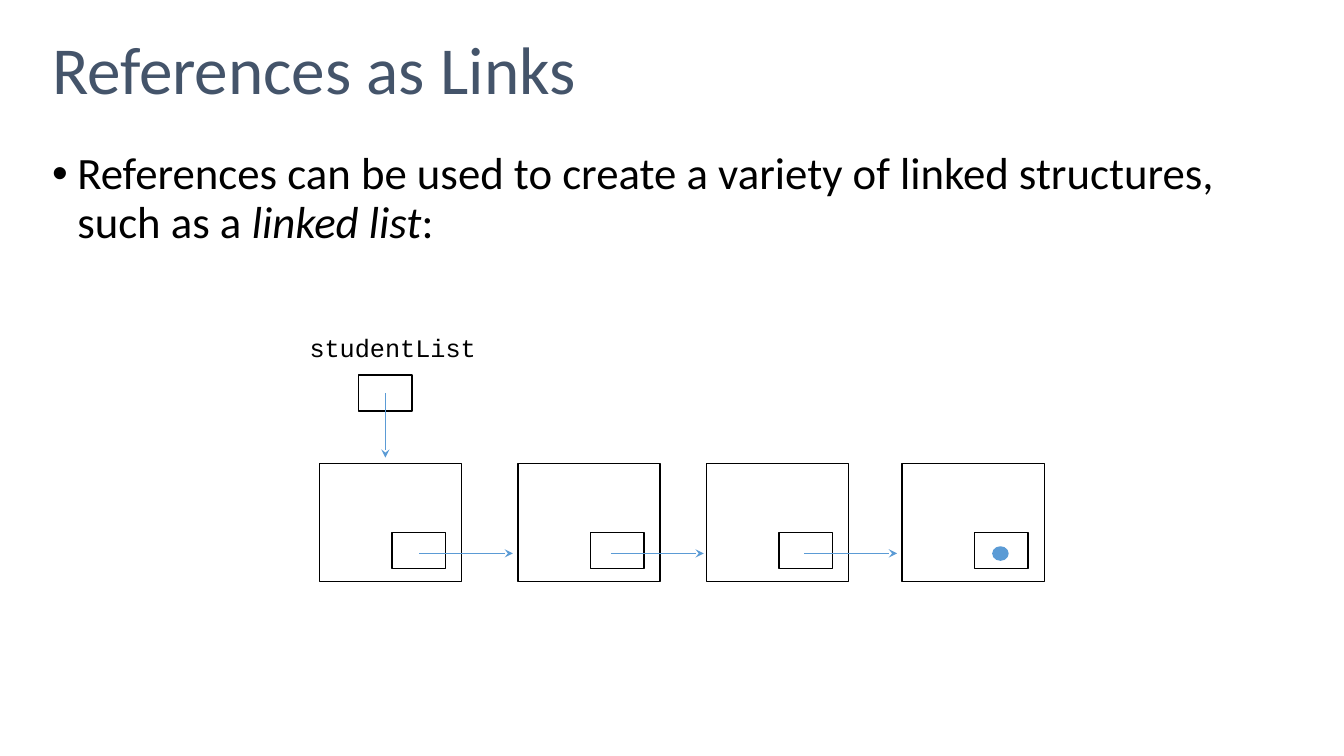
from pptx import Presentation
from pptx.util import Pt
from pptx.dml.color import RGBColor
from pptx.enum.shapes import MSO_SHAPE as Shape, MSO_CONNECTOR as Conn
from pptx.enum.text import PP_ALIGN as Align, MSO_ANCHOR as Anchor, MSO_AUTO_SIZE as Auto
from pptx.oxml.ns import qn
from lxml.etree import SubElement as Sub

# Content
TITLE = "References as Links"
BODY = [
    ("References can be used to create a variety of linked structures, such as a ", False),
    ("linked list", True),
    (":", False),
]
LABEL = "studentList"

# Layout in points
TITLE_BOX = (30, 0, 900, 104.4)
BODY_BOX = (30, 104.4, 900, 407.5)
LABEL_BOX = (213.8, 234, 133.2, 28.8)
HEAD = (256.2, 267.8)
NODES = [228.2, 370.1, 504.7, 644.4]
NODE_Y = 331.2
NODE = (101.5, 84.2)
SLOT = (38.2, 25.9)
SLOT_AT = (51.8, 49)
LINK_Y = 395.3
LINKS = [(299.4, 366.4), (436.3, 502.7), (574.5, 640.8)]
DOT = (709.2, 390.7, 10.8, 9.4)

BLACK, SLATE, BLUE = "000000", "44546A", "5B9BD5"


def color(text):
    return RGBColor.from_string(text)


def pts(vals):
    return [Pt(v) for v in vals]


def place(shape, box):
    shape.left, shape.top, shape.width, shape.height = pts(box)


def style(para, size, font, tint):
    for run in para.runs:
        run.font.size = Pt(size)
        run.font.name = font
        run.font.color.rgb = color(tint)


def draw(kind, box, line, fill=None):
    shape = parts.add_shape(kind, *pts(box))
    shape.shadow.inherit = False
    if fill:
        shape.fill.solid()
        shape.fill.fore_color.rgb = color(fill)
    else:
        shape.fill.background()
    shape.line.color.rgb = color(line)
    shape.line.width = Pt(1)


def arrow(x1, y1, x2, y2):
    link = parts.add_connector(Conn.STRAIGHT, *pts((x1, y1, x2, y2)))
    link.line.color.rgb = color(BLUE)
    link.line.width = Pt(1)
    Sub(link.line._get_or_add_ln(), qn("a:tailEnd"), type="stealth")
    Sub(link._element.spPr, qn("a:effectLst"))


prs = Presentation()
prs.slide_width, prs.slide_height = Pt(960), Pt(540)
slide = prs.slides.add_slide(prs.slide_layouts[1])

# Title
title = slide.shapes.title
place(title, TITLE_BOX)
frame = title.text_frame
frame.text = TITLE
frame.auto_size = Auto.NONE
frame.vertical_anchor = Anchor.MIDDLE
para = frame.paragraphs[0]
para.alignment = Align.LEFT
para.line_spacing = 0.9
style(para, 48, "Calibri", SLATE)

# Bulleted text
body = slide.placeholders[1]
place(body, BODY_BOX)
frame = body.text_frame
frame.auto_size = Auto.NONE
para = frame.paragraphs[0]
for text, slant in BODY:
    run = para.add_run()
    run.text = text
    run.font.italic = slant
para.line_spacing = 0.9
para.space_before = Pt(10)
style(para, 32, "Calibri", BLACK)
props = para._p.get_or_add_pPr()
props.set("marL", str(Pt(18)))
props.set("indent", str(Pt(-18)))
Sub(props, qn("a:buFont"), typeface="Arial")
Sub(props, qn("a:buChar"), char="•")

# List head and its label
parts = slide.shapes.add_group_shape().shapes
draw(Shape.RECTANGLE, HEAD + SLOT, BLACK)
label = parts.add_textbox(*pts(LABEL_BOX))
frame = label.text_frame
frame.word_wrap = False
frame.auto_size = Auto.SHAPE_TO_FIT_TEXT
frame.text = LABEL
para = frame.paragraphs[0]
para.alignment = Align.RIGHT
style(para, 18, "Courier New", BLACK)

# Nodes, each with a link slot
for x in NODES:
    draw(Shape.RECTANGLE, (x, NODE_Y) + NODE, BLACK)
    draw(Shape.RECTANGLE, (x + SLOT_AT[0], NODE_Y + SLOT_AT[1]) + SLOT, BLACK)

# Links and the end mark
for start, end in LINKS:
    arrow(start, LINK_Y, end, LINK_Y)
mid = HEAD[0] + SLOT[0] / 2
arrow(mid, HEAD[1] + SLOT[1] / 2, mid, NODE_Y - 4.3)
draw(Shape.OVAL, DOT, BLUE, BLUE)

prs.save("out.pptx")
